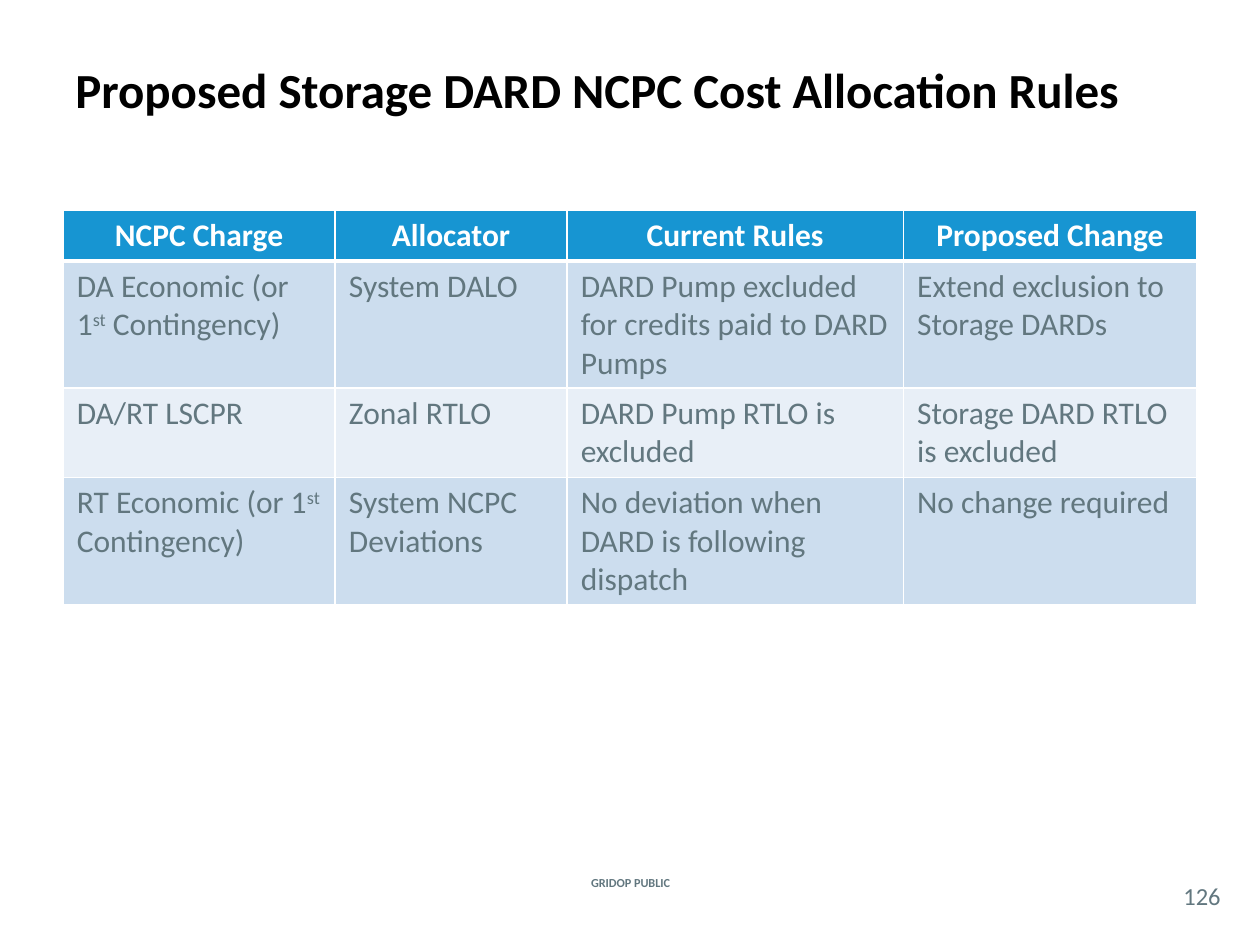
from dataclasses import dataclass

from lxml.etree import SubElement
from pptx import Presentation
from pptx.dml.color import RGBColor as RGB
from pptx.enum.text import MSO_ANCHOR as Anchor, PP_ALIGN as Align
from pptx.oxml.ns import qn
from pptx.util import Inches, Pt


@dataclass(frozen=True)
class Theme:
    font: str = "Calibri"
    black: str = "000000"
    white: str = "FFFFFF"
    slate: str = "62777F"
    header: str = "1795D2"
    bands: tuple = ("CCDDEE", "E8EFF7")
    title_size: int = 28
    table_size: int = 18
    number_size: int = 14
    footer_size: int = 7


class SlideBuilder:
    def __init__(self, slide, theme):
        self.s = slide
        self.theme = theme

    def style(self, p, size, color, bold=False, align=Align.LEFT):
        p.alignment = align
        p.font.name = self.theme.font
        p.font.size = Pt(size)
        p.font.bold = bold
        p.font.color.rgb = RGB.from_string(color)

    def text(self, box, text, size, color, bold=False, align=Align.CENTER, inset=None):
        tf = self.s.shapes.add_textbox(*map(Inches, box)).text_frame
        tf.word_wrap = True
        tf.vertical_anchor = Anchor.MIDDLE
        if inset is not None:
            tf.margin_left = tf.margin_right = Inches(inset)
            tf.margin_top = tf.margin_bottom = Inches(inset)
        p = tf.paragraphs[0]
        p.text = text
        self.style(p, size, color, bold, align)

    def rich_text(self, p, text):
        """Add runs to p; the parts between carets are superscript."""
        for i, part in enumerate(text.split("^")):
            r = p.add_run()
            r.text = part
            if i % 2:
                r.font._element.set("baseline", "30000")

    def borders(self, cell, bottom):
        tc_pr = cell._tc.get_or_add_tcPr()
        widths = {"a:lnL": 1, "a:lnR": 1, "a:lnT": 1, "a:lnB": bottom}
        for i, (tag, width) in enumerate(widths.items()):
            ln = SubElement(tc_pr, qn(tag), w=str(Pt(width)))
            tc_pr.insert(i, ln)  # border lines come before the fill
            fill = SubElement(ln, qn("a:solidFill"))
            SubElement(fill, qn("a:srgbClr"), val=self.theme.white)

    def table(self, left, top, col_widths, row_heights, rows):
        t = self.theme
        table = self.s.shapes.add_table(
            len(rows), len(col_widths), Inches(left), Inches(top),
            Inches(sum(col_widths)), Inches(sum(row_heights))).table
        for col, width in zip(table.columns, col_widths):
            col.width = Inches(width)
        for i, (row, height, texts) in enumerate(zip(table.rows, row_heights, rows)):
            row.height = Inches(height)
            is_header = i == 0
            fill = t.header if is_header else t.bands[(i - 1) % 2]
            for cell, text in zip(row.cells, texts):
                cell.fill.solid()
                cell.fill.fore_color.rgb = RGB.from_string(fill)
                cell.margin_left = cell.margin_right = Inches(0.11)
                self.borders(cell, 3 if is_header else 1)
                p = cell.text_frame.paragraphs[0]
                self.rich_text(p, text)
                self.style(p, t.table_size, t.white if is_header else t.slate,
                           is_header, Align.CENTER if is_header else Align.LEFT)


RULES = [
    ["NCPC Charge", "Allocator", "Current Rules", "Proposed Change"],
    ["DA Economic (or 1^st^ Contingency)", "System DALO",
     "DARD Pump excluded for credits paid to DARD Pumps",
     "Extend exclusion to Storage DARDs"],
    ["DA/RT LSCPR", "Zonal RTLO", "DARD Pump RTLO is excluded",
     "Storage DARD RTLO is excluded"],
    ["RT Economic (or 1^st^ Contingency)", "System NCPC Deviations",
     "No deviation when DARD is following dispatch", "No change required"],
]


def main():
    prs = Presentation()
    prs.slide_width, prs.slide_height = Inches(10), Inches(7.5)
    theme = Theme()
    b = SlideBuilder(prs.slides.add_slide(prs.slide_layouts[6]), theme)

    b.text((4.27, 6.92, 1.47, 0.17), "GRIDOP PUBLIC",
           theme.footer_size, theme.slate, bold=True)
    b.text((9.33, 6.96, 0.42, 0.29), "126",
           theme.number_size, theme.slate, inset=0)
    b.text((0.5, 0.08, 9, 1.25), "Proposed Storage DARD NCPC Cost Allocation Rules",
           theme.title_size, theme.black, bold=True, align=Align.LEFT)
    b.table(0.5, 1.67, (2.16, 1.84, 2.67, 2.33), (0.4, 1.01, 0.71, 1.01), RULES)

    prs.save("out.pptx")


if __name__ == "__main__":
    main()
